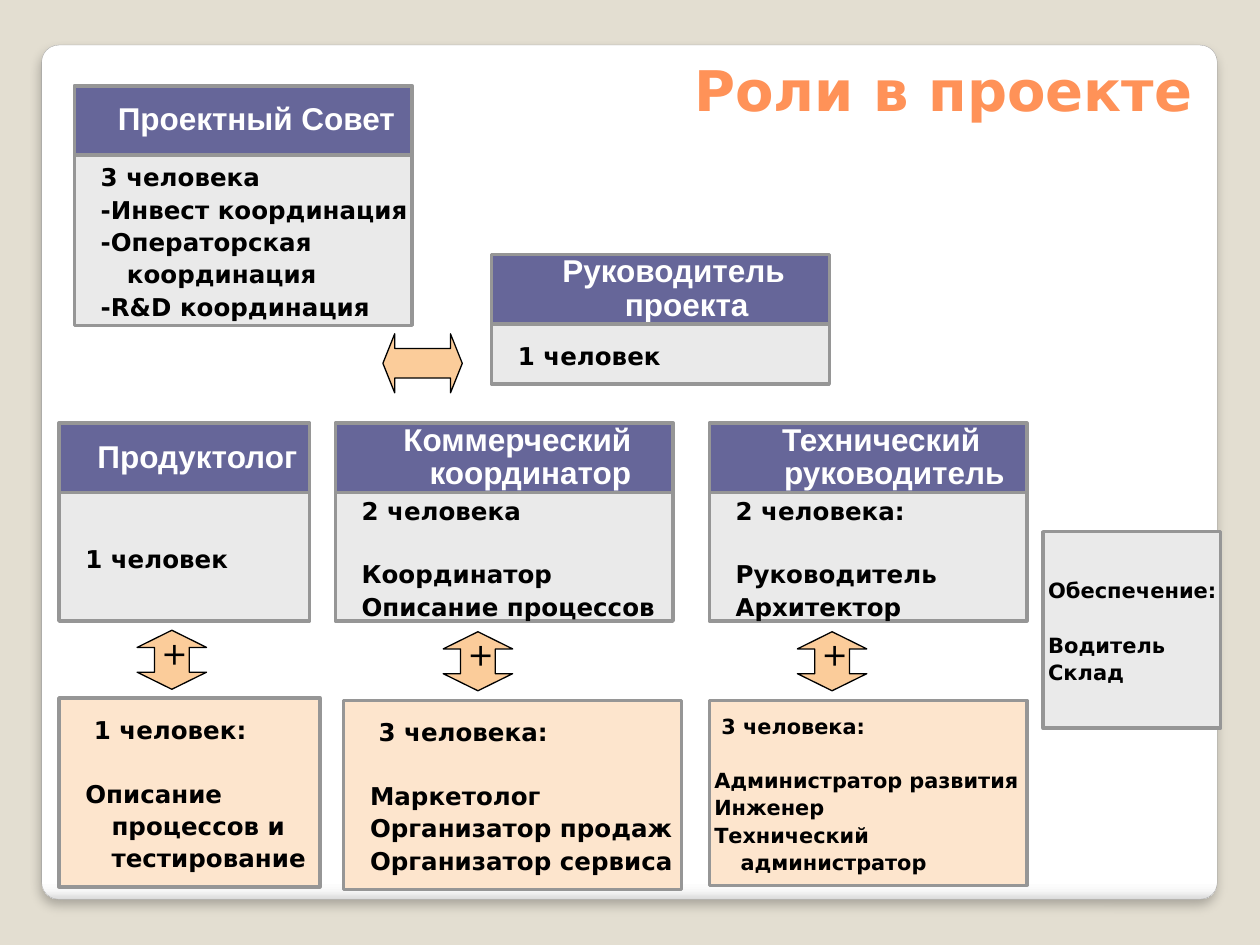
from lxml import etree
from pptx import Presentation
from pptx.dml.color import RGBColor
from pptx.enum.shapes import MSO_SHAPE
from pptx.enum.text import MSO_ANCHOR, PP_ALIGN
from pptx.oxml import parse_xml
from pptx.util import Cm, Pt

RECT, ROUNDED, ARROW = MSO_SHAPE.RECTANGLE, MSO_SHAPE.ROUNDED_RECTANGLE, MSO_SHAPE.LEFT_RIGHT_ARROW
TOP, MIDDLE = MSO_ANCHOR.TOP, MSO_ANCHOR.MIDDLE
LEFT, CENTER, RIGHT = PP_ALIGN.LEFT, PP_ALIGN.CENTER, PP_ALIGN.RIGHT

BACKGROUND = RGBColor(0xE3, 0xDE, 0xD1)
ORANGE = RGBColor(0xFF, 0x92, 0x58)
VIOLET = RGBColor(0x66, 0x66, 0x99)
GRAY = RGBColor(0x96, 0x96, 0x96)
PANEL_EDGE = RGBColor(0xA4, 0xA4, 0xA4)
LIGHT = RGBColor(0xEA, 0xEA, 0xEA)
PEACH = RGBColor(0xFD, 0xE5, 0xCD)
ARROW_FILL = RGBColor(0xFB, 0xCC, 0x9A)
BLACK = RGBColor(0, 0, 0)
WHITE = RGBColor(0xFF, 0xFF, 0xFF)

DRAWING = "http://schemas.openxmlformats.org/drawingml/2006/main"
SANS, ARIAL = "DejaVu Sans", "Arial"
HANGING = Cm(0.53)
HEAD_HEIGHT = 1.4
PANEL_STOPS = [(0, "FFFFFF"), (98, "FFFFFF"), (99, "F7F7F7"), (100, "DADADA")]

# Role cards: left, top, width, body height, heading, body lines
ROLES = [
    (1.5, 1.73, 6.81, 3.43, "Проектный Совет",
     ["3 человека", "-Инвест координация", "-Операторская координация", "-R&D координация"]),
    (9.91, 5.13, 6.81, 1.21, "Руководитель проекта", ["1 человек"]),
    (1.19, 8.53, 5.05, 2.59, "Продуктолог", ["1 человек"]),
    (6.76, 8.53, 6.81, 2.59, "Коммерческий координатор",
     ["2 человека", "", "Координатор", "Описание процессов"]),
    (14.3, 8.53, 6.4, 2.59, "Технический руководитель",
     ["2 человека:", "", "Руководитель", "Архитектор"]),
]

# Team boxes: left, top, width, height, fill, text size, left inset, lines
TEAMS = [
    (1.19, 14.07, 5.26, 3.81, PEACH, 14, 0.53,
     [" 1 человек:", "", "Описание процессов и тестирование"]),
    (6.93, 14.12, 6.81, 3.81, PEACH, 14, 0.53,
     [" 3 человека:", "", "Маркетолог", "Организатор продаж", "Организатор сервиса"]),
    (14.3, 14.12, 6.4, 3.73, PEACH, 11.9, 0.1,
     [" 3 человека:", "", "Администратор развития", "Инженер", "Технический администратор"]),
    (21.03, 10.72, 3.58, 3.96, LIGHT, 12, 0.1,
     ["Обеспечение:", "", "Водитель", "Склад"]),
]

# Left and top of the arrows between roles and teams
PLUS_ARROWS = [(2.87, 12.6), (9.04, 12.63), (16.18, 12.63)]


def apply(target, values):
    for name, value in values.items():
        setattr(target, name, value)


def add_box(page, kind, place, fill, line, width):
    box = page.shapes.add_shape(kind, *[Cm(length) for length in place])
    box.shadow.inherit = False
    box.fill.solid()
    box.fill.fore_color.rgb = fill
    box.line.color.rgb = line
    box.line.width = Pt(width)
    return box


def add_span(para, text, size, font, color, bold=True):
    span = para.add_run()
    span.text = text
    apply(span.font, {"size": Pt(size), "name": font, "bold": bold})
    span.font.color.rgb = color


def write_lines(box, lines, size, font, color, align, spacing, inset):
    """Fill a box with hanging lines; an empty entry opens a one-line gap."""
    frame = box.text_frame
    apply(frame, {"word_wrap": True, "vertical_anchor": MIDDLE, "margin_left": Cm(inset),
                  "margin_top": 0, "margin_right": 0, "margin_bottom": 0})
    gap = 0
    para = frame.paragraphs[0]
    for index, line in enumerate(lines):
        if not line:
            gap = size * 1.28
            continue
        if index:
            para = frame.add_paragraph()
        apply(para, {"alignment": align, "line_spacing": spacing, "space_before": Pt(gap)})
        properties = para._p.get_or_add_pPr()
        properties.set("marL", str(HANGING))
        properties.set("indent", str(-HANGING))
        add_span(para, line, size, font, color)
        gap = 0


def add_role(page, left, top, width, body_height, heading, lines):
    head = add_box(page, RECT, (left, top, width, HEAD_HEIGHT), VIOLET, GRAY, 2)
    write_lines(head, [heading], 18, ARIAL, WHITE, CENTER, Pt(19), 0.53)
    add_team(page, left, top + HEAD_HEIGHT, width, body_height, LIGHT, 14, 0.53, lines)


def add_team(page, left, top, width, height, fill, size, inset, lines):
    box = add_box(page, RECT, (left, top, width, height), fill, GRAY, 2)
    write_lines(box, lines, size, SANS, BLACK, LEFT, 1.1, inset)


def add_arrow(page, place, head):
    arrow = add_box(page, ARROW, place, ARROW_FILL, BLACK, 0.75)
    arrow.adjustments[1] = head
    return arrow


def add_plus_arrow(page, left, top):
    arrow = add_arrow(page, (left, top, 1.19, 1.4), 0.29)
    arrow.rotation = 270
    apply(arrow.text_frame, {"word_wrap": False, "vertical_anchor": MIDDLE})
    para = arrow.text_frame.paragraphs[0]
    para.alignment = LEFT
    add_span(para, "+", 18, SANS, BLACK, bold=False)


def add_panel(page):
    panel = add_box(page, ROUNDED, (0.84, 0.91, 23.7, 17.22), WHITE, PANEL_EDGE, 0.16)
    panel.adjustments[0] = 0.02
    # Four-stop gradient
    panel.fill.gradient()
    panel.fill.gradient_angle = 270
    stops = panel.element.spPr.find(f".//{{{DRAWING}}}gsLst")
    for stop in list(stops):
        stops.remove(stop)
    for position, color in PANEL_STOPS:
        stop = etree.SubElement(stops, f"{{{DRAWING}}}gs", pos=str(position * 1000))
        etree.SubElement(stop, f"{{{DRAWING}}}srgbClr", val=color)
    # Soft shadow
    effects = panel.element.spPr.find(f"{{{DRAWING}}}effectLst")
    effects.append(parse_xml(
        f'<a:outerShdw xmlns:a="{DRAWING}" blurRad="{Pt(6)}" dist="{Pt(4)}" dir="5400000" '
        'algn="t" rotWithShape="0"><a:srgbClr val="000000"><a:alpha val="25000"/>'
        '</a:srgbClr></a:outerShdw>'))
    page.shapes.title.element.addprevious(panel.element)


def add_title(page, text):
    title = page.shapes.title
    apply(title, {"left": Cm(7.92), "top": Cm(0.99), "width": Cm(16.38), "height": Cm(2.54)})
    title.text_frame.vertical_anchor = TOP
    para = title.text_frame.paragraphs[0]
    para.alignment = RIGHT
    add_span(para, text, 32, SANS, ORANGE)


def main():
    deck = Presentation()
    apply(deck, {"slide_width": Cm(25.4), "slide_height": Cm(19.05)})
    page = deck.slides.add_slide(deck.slide_layouts[5])
    page.background.fill.solid()
    page.background.fill.fore_color.rgb = BACKGROUND

    add_panel(page)
    add_title(page, "Роли в проекте")
    for role in ROLES:
        add_role(page, *role)
    for team in TEAMS:
        add_team(page, *team)

    # Links between the roles
    add_arrow(page, (7.72, 6.73, 1.6, 1.19), 0.2)
    for place in PLUS_ARROWS:
        add_plus_arrow(page, *place)

    deck.save("out.pptx")


if __name__ == "__main__":
    main()
